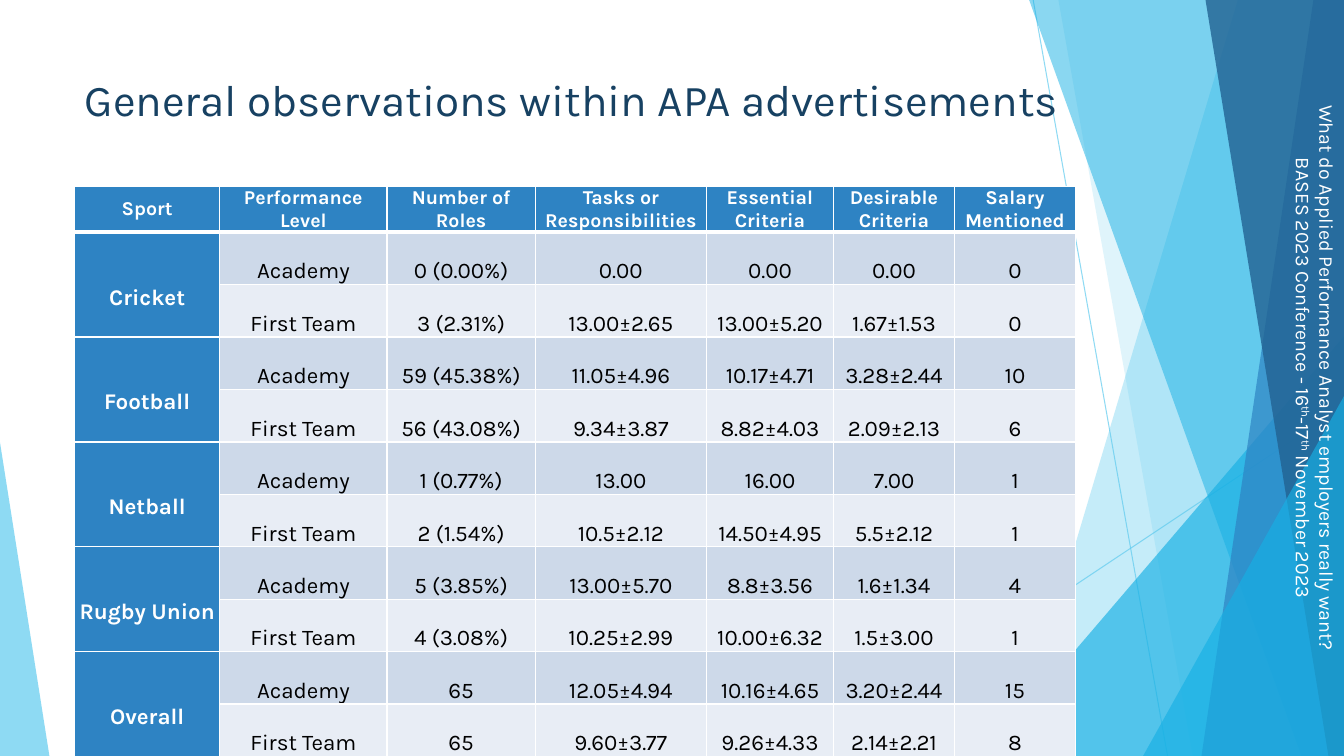
from dataclasses import dataclass

from lxml import etree
from pptx import Presentation
from pptx.dml.color import RGBColor
from pptx.enum.shapes import MSO_CONNECTOR, MSO_SHAPE
from pptx.enum.text import MSO_ANCHOR, MSO_AUTO_SIZE, PP_ALIGN
from pptx.oxml.ns import qn
from pptx.util import Inches, Pt

STRAIGHT = MSO_CONNECTOR.STRAIGHT
TRIANGLE = MSO_SHAPE.ISOSCELES_TRIANGLE
TOP, MIDDLE = MSO_ANCHOR.TOP, MSO_ANCHOR.MIDDLE
LEFT, CENTER = PP_ALIGN.LEFT, PP_ALIGN.CENTER
NO_FIT = MSO_AUTO_SIZE.NONE

# The slide is a grid of 160 columns by 90 rows, twelve to the inch.
COLS, ROWS = 160, 90
TITLE_ONLY = 5


@dataclass(frozen=True)
class Theme:
    font: str = "Karla"
    title: str = "174162"
    sky: str = "5FCBEF"
    cyan: str = "17B0E4"
    blue: str = "2E83C3"
    navy: str = "226292"
    dark_band: str = "CDD9E9"
    light_band: str = "E8EDF5"
    white: str = "FFFFFF"
    black: str = "000000"
    title_size: float = 31.5
    body_size: float = 16
    small_size: float = 14


THEME = Theme()

HEADS = ["Sport", "Performance Level", "Number of Roles",
         "Tasks or Responsibilities", "Essential Criteria",
         "Desirable Criteria", "Salary Mentioned"]
WIDTHS = [17.28, 19.92, 17.64, 20.4, 15.12, 14.4, 14.4]
LEVELS = ["Academy", "First Team"]
SPORTS = {
    "Cricket": [
        ["0 (0.00%)", "0.00", "0.00", "0.00", "0"],
        ["3 (2.31%)", "13.00±2.65", "13.00±5.20", "1.67±1.53", "0"]],
    "Football": [
        ["59 (45.38%)", "11.05±4.96", "10.17±4.71", "3.28±2.44", "10"],
        ["56 (43.08%)", "9.34±3.87", "8.82±4.03", "2.09±2.13", "6"]],
    "Netball": [
        ["1 (0.77%)", "13.00", "16.00", "7.00", "1"],
        ["2 (1.54%)", "10.5±2.12", "14.50±4.95", "5.5±2.12", "1"]],
    "Rugby Union": [
        ["5 (3.85%)", "13.00±5.70", "8.8±3.56", "1.6±1.34", "4"],
        ["4 (3.08%)", "10.25±2.99", "10.00±6.32", "1.5±3.00", "1"]],
    "Overall": [
        ["65", "12.05±4.94", "10.16±4.65", "3.20±2.44", "15"],
        ["65", "9.60±3.77", "9.26±4.33", "2.14±2.21", "8"]],
}


def grid(*units):
    return [Inches(unit / 12) for unit in units]


def style(font, size, color, bold=False):
    font.name, font.size, font.bold = THEME.font, Pt(size), bold
    font.color.rgb = RGBColor.from_string(color)


def fade(shape, alpha):
    """Set the opacity of the shape's colour, in percent."""
    color = shape.element.find(".//" + qn("a:srgbClr"))
    etree.SubElement(color, qn("a:alpha"), val=str(alpha * 1000))


def paint(shape, color, alpha):
    shape.shadow.inherit = False
    shape.fill.solid()
    shape.fill.fore_color.rgb = RGBColor.from_string(color)
    shape.line.fill.background()
    fade(shape, alpha)


def add_ray(slide, *ends):
    ray = slide.shapes.add_connector(STRAIGHT, *grid(*ends))
    ray.line.width = Pt(0.75)
    ray.line.color.rgb = RGBColor.from_string(THEME.sky)
    fade(ray, 70)
    etree.SubElement(ray.element.spPr, qn("a:effectLst"))


def add_facet(slide, top, bottom, color, alpha):
    """Fill from a slanted left side to the right edge of the slide."""
    start, *rest = [grid(*spot) for spot in
                    [(top, 0), (COLS, 0), (COLS, ROWS), (bottom, ROWS)]]
    path = slide.shapes.build_freeform(*start, scale=1.0)
    path.add_line_segments(rest, close=True)
    paint(path.convert_to_shape(), color, alpha)


def add_wedge(slide, left, top, width, apex, color, alpha):
    """Stand a triangle on the bottom edge of the slide."""
    box = grid(left, top, width, ROWS - top)
    wedge = slide.shapes.add_shape(TRIANGLE, *box)
    wedge.adjustments[0] = apex
    paint(wedge, color, alpha)


def add_banner(slide):
    box = slide.shapes.add_textbox(*grid(151.92, 0, 8.08, ROWS))
    frame = box.text_frame
    frame.word_wrap = True
    box.element.find(".//" + qn("a:bodyPr")).set("vert", "vert")
    frame.text = "What do Applied Performance Analyst employers really want?"
    date = frame.add_paragraph()
    for part in ["BASES 2023 Conference - 16", "th", "-17", "th",
                 " November 2023"]:
        date.add_run().text = part
    for line in frame.paragraphs:
        line.alignment = CENTER
        for run in line.runs:
            style(run.font, THEME.small_size, THEME.white)
    for run in box.element.iter(qn("a:r")):
        if run.find(qn("a:t")).text == "th":
            run.find(qn("a:rPr")).set("baseline", "30000")


def set_title(slide, text):
    title = slide.shapes.title
    title.left, title.top, title.width, title.height = grid(
        8.88, 8.04, 120.24, 17.28)
    frame = title.text_frame
    frame.text = text
    frame.word_wrap, frame.auto_size = True, NO_FIT
    frame.vertical_anchor = TOP
    line = frame.paragraphs[0]
    line.alignment = LEFT
    style(line.runs[0].font, THEME.title_size, THEME.title)
    title.element.getparent().append(title.element)


def add_edges(frame):
    """Rule the cells in white, with a thick line under the header."""
    for row, line in enumerate(frame.element.iter(qn("a:tr"))):
        for cell in line.iter(qn("a:tc")):
            for side in "LRTB":
                thick = (row, side) in [(0, "B"), (1, "T")]
                edge = etree.SubElement(cell.get_or_add_tcPr(),
                                        qn("a:ln" + side),
                                        w=str(Pt(3 if thick else 1)))
                fill = etree.SubElement(edge, qn("a:solidFill"))
                etree.SubElement(fill, qn("a:srgbClr"), val=THEME.white)


def fill_cell(cell, text, color, size, ink, bold, space):
    cell.fill.solid()
    cell.fill.fore_color.rgb = RGBColor.from_string(color)
    cell.vertical_anchor = MIDDLE
    cell.margin_left = cell.margin_right = Inches(0.04)
    cell.margin_top = cell.margin_bottom = 0
    cell.text = text
    line = cell.text_frame.paragraphs[0]
    line.alignment, line.line_spacing = CENTER, space
    style(line.runs[0].font, size, ink, bold)


def add_roles(slide):
    count = 1 + len(SPORTS) * len(LEVELS)
    frame = slide.shapes.add_table(count, len(HEADS), *grid(
        8.88, 22.2, sum(WIDTHS), 4.68 * count))
    table = frame.table
    table.horz_banding = False
    add_edges(frame)
    for column, width in zip(table.columns, grid(*WIDTHS)):
        column.width = width
    for col, head in enumerate(HEADS):
        fill_cell(table.cell(0, col), head, THEME.blue, THEME.small_size,
                  THEME.white, True, 1.0)
    bands = [THEME.dark_band, THEME.light_band]
    for index, (sport, stats) in enumerate(SPORTS.items()):
        first = 1 + index * len(LEVELS)
        name = table.cell(first, 0)
        name.merge(table.cell(first + len(LEVELS) - 1, 0))
        fill_cell(name, sport, THEME.blue, THEME.body_size,
                  THEME.white, True, 2.0)
        for step, (level, values) in enumerate(zip(LEVELS, stats)):
            for col, value in enumerate([level, *values], 1):
                fill_cell(table.cell(first + step, col), value, bands[step],
                          THEME.body_size, THEME.black, False, 2.0)


def main():
    deck = Presentation()
    deck.slide_width, deck.slide_height = grid(COLS, ROWS)
    slide = deck.slides.add_slide(deck.slide_layouts[TITLE_ONLY])
    add_ray(slide, 123, 0, 139, ROWS)
    add_ray(slide, COLS, 48.36, 97.44, ROWS)
    add_facet(slide, 147.36, 120.48, THEME.sky, 36)
    add_facet(slide, 126, 142, THEME.sky, 20)
    add_wedge(slide, 117.24, 40, 42.76, 1, THEME.cyan, 66)
    add_facet(slide, 122.52, 154.92, THEME.cyan, 50)
    add_facet(slide, 156.36, 143.04, THEME.blue, 70)
    add_facet(slide, 143.52, 158.16, THEME.navy, 80)
    add_wedge(slide, 136.08, 47.16, 23.92, 1, THEME.cyan, 66)
    add_wedge(slide, 0, 52.68, 5.88, 0, THEME.sky, 70)
    add_banner(slide)
    set_title(slide, "General observations within APA advertisements")
    add_roles(slide)
    deck.save("out.pptx")


if __name__ == "__main__":
    main()
